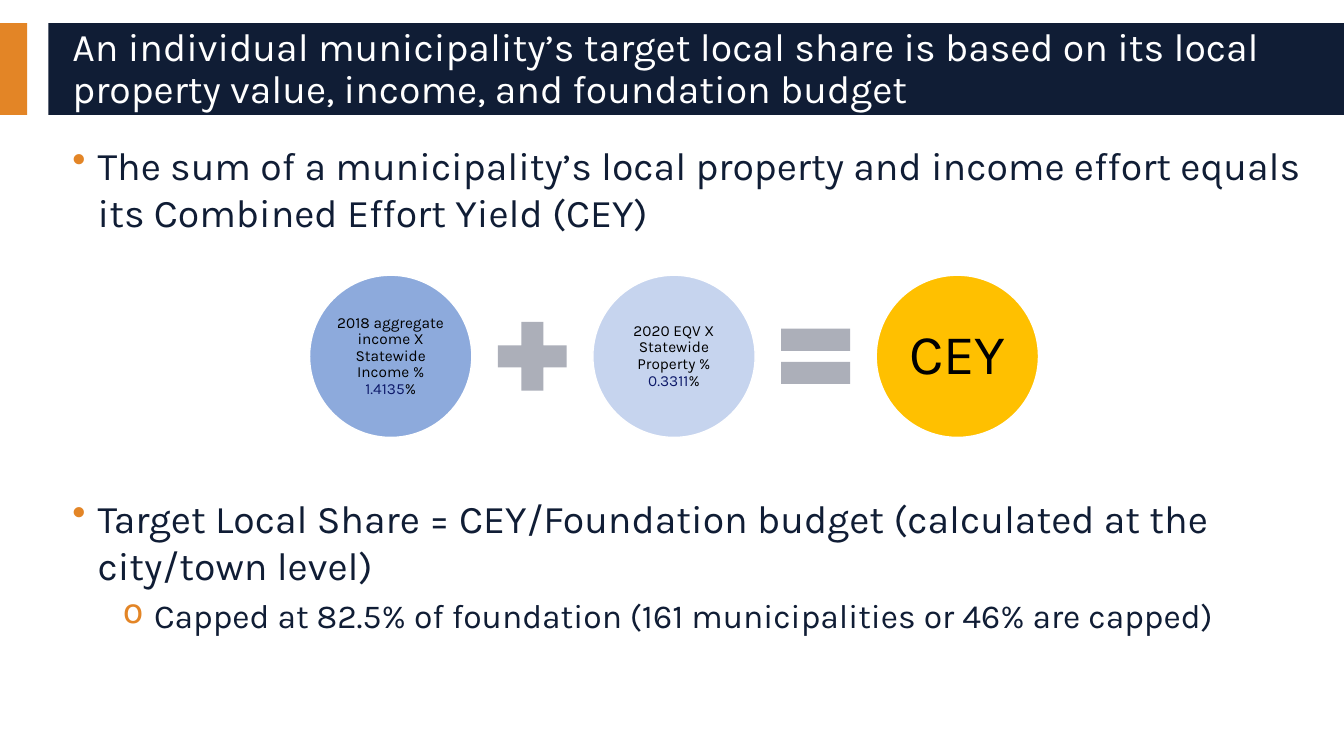
from lxml import etree
from pptx import Presentation
from pptx import util as u
from pptx.dml import color
from pptx.enum import shapes, text
from pptx.oxml import ns

FONT = "Karla"
NAVY, ORANGE, WHITE, BLACK = "101D35", "E38526", "FFFFFF", "000000"
FIGURE, OPERATOR = "0D1969", "ACAFB9"


def rgb(value):
    return color.RGBColor.from_string(value)


def add_shape(s, kind, x, y, w, h, fill, line=None):
    sp = s.shapes.add_shape(kind, u.Inches(x), u.Inches(y), u.Inches(w), u.Inches(h))
    sp.shadow.inherit = False
    sp.fill.solid()
    sp.fill.fore_color.rgb = rgb(fill)
    if line:
        sp.line.color.rgb = rgb(line)
        sp.line.width = u.Pt(1)
    else:
        sp.line.fill.background()
    return sp


def add_text_box(s, x, y, w, h):
    return s.shapes.add_textbox(u.Inches(x), u.Inches(y), u.Inches(w), u.Inches(h)).text_frame


def set_frame(tf, anchor, inset=None):
    tf.word_wrap = True
    tf.vertical_anchor = anchor
    if inset is not None:
        tf.margin_left = tf.margin_right = u.Inches(inset)
        tf.margin_top = tf.margin_bottom = u.Inches(inset)


def add_run(p, words, size=28, fill=NAVY):
    r = p.add_run()
    r.text = words
    r.font.name = FONT
    r.font.size = u.Pt(size)
    r.font.color.rgb = rgb(fill)


def set_bullet(p, mark, left, hang):
    pPr = p._p.get_or_add_pPr()
    pPr.set("marL", str(u.Inches(left)))
    pPr.set("indent", str(-u.Inches(hang)))
    clr = etree.SubElement(pPr, ns.qn("a:buClr"))
    etree.SubElement(clr, ns.qn("a:srgbClr"), val=ORANGE)
    etree.SubElement(pPr, ns.qn("a:buChar"), char=mark)


def add_header(s, x, y, w, h, title):
    add_shape(s, shapes.MSO_SHAPE.RECTANGLE, x, y, 0.27, h, ORANGE)
    add_shape(s, shapes.MSO_SHAPE.RECTANGLE, x + 0.48, y, w - 0.48, h, NAVY)
    tf = add_text_box(s, x + 0.62, y + 0.09, 12.44, 0.74)
    set_frame(tf, text.MSO_ANCHOR.MIDDLE)
    p = tf.paragraphs[0]
    p.line_spacing = 0.9
    add_run(p, title, fill=WHITE)


def add_points(s, x, y, w, h, points):
    tf = add_text_box(s, x, y, w, h)
    set_frame(tf, text.MSO_ANCHOR.TOP)
    for i, (level, words) in enumerate(points):
        p = tf.add_paragraph() if i else tf.paragraphs[0]
        p.level = level
        p.space_before = u.Pt(5 if level else 10)
        if level:
            set_bullet(p, "o", 0.81, 0.31)
        else:
            set_bullet(p, "•", 0.25, 0.25)
        add_run(p, words, size=24 if level else 28)


def add_equation(s, x, y, size, terms, operators):
    op_size, gap = 0.93, 0.135
    pitch = size + op_size + 2 * gap
    for i, (fill, inset, points, runs) in enumerate(terms):
        sp = add_shape(s, shapes.MSO_SHAPE.OVAL, x + i * pitch, y, size, size, fill, WHITE)
        set_frame(sp.text_frame, text.MSO_ANCHOR.MIDDLE, inset)
        p = sp.text_frame.paragraphs[0]
        p.alignment = text.PP_ALIGN.CENTER
        p.line_spacing = 0.9
        for words, ink in runs:
            add_run(p, words, size=points, fill=ink)
    for i, kind in enumerate(operators):
        add_shape(s, kind, x + i * pitch + size + gap, y + (size - op_size) / 2,
                  op_size, op_size, OPERATOR)


def main():
    prs = Presentation()
    prs.slide_width, prs.slide_height = u.Inches(13.33), u.Inches(7.5)
    s = prs.slides.add_slide(prs.slide_layouts[6])
    add_header(s, 0, 0.23, 13.33, 0.91,
               "An individual municipality’s target local share is based on its local "
               "property value, income, and foundation budget")
    add_points(s, 0.62, 1.35, 12.44, 1.1, [
        (0, "The sum of a municipality’s local property and income effort equals "
            "its Combined Effort Yield (CEY)"),
    ])
    add_equation(s, 3.07, 2.73, 1.61, [
        ("8DAADC", 0.02, 11, [("2018 aggregate income X Statewide Income % ", BLACK),
                              ("1.4135", FIGURE), ("%", BLACK)]),
        ("C6D4EE", 0.02, 11, [("2020 EQV X Statewide Property % ", BLACK),
                              ("0.3311", FIGURE), ("%", BLACK)]),
        ("FFC000", 0.06, 40, [("CEY", BLACK)]),
    ], [shapes.MSO_SHAPE.MATH_PLUS, shapes.MSO_SHAPE.MATH_EQUAL])
    add_points(s, 0.62, 4.85, 12.44, 2.02, [
        (0, "Target Local Share = CEY/Foundation budget (calculated at the city/town level)"),
        (1, "Capped at 82.5% of foundation (161 municipalities or 46% are capped)"),
    ])
    prs.save("out.pptx")


if __name__ == "__main__":
    main()
